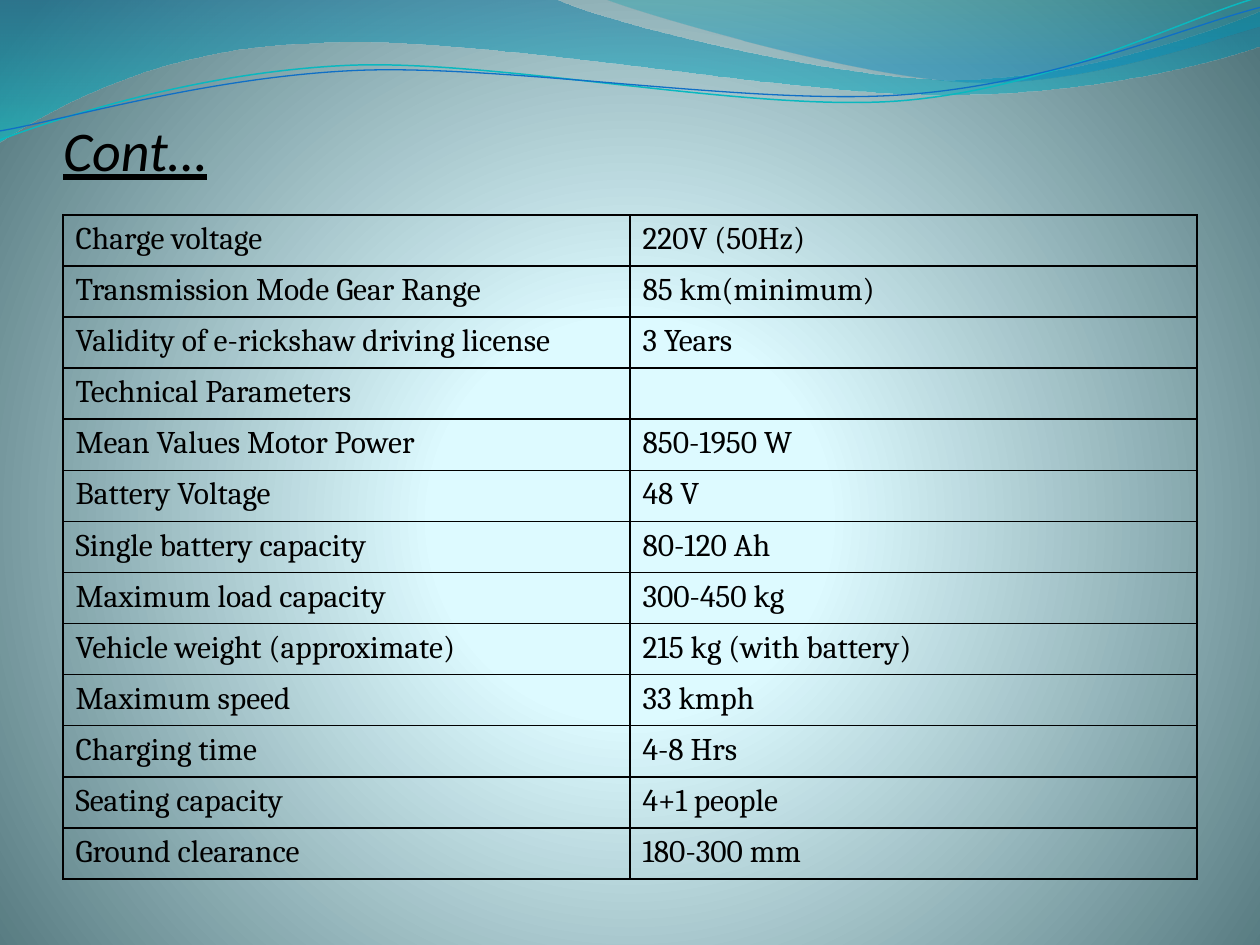
"""Build the e-rickshaw specification slide with its wave header."""
from dataclasses import dataclass
from typing import Optional

from lxml import etree
from pptx import Presentation
from pptx.dml.color import RGBColor
from pptx.enum.text import MSO_ANCHOR, MSO_AUTO_SIZE, PP_ALIGN
from pptx.oxml.ns import qn
from pptx.util import Cm, Pt

LEFT = PP_ALIGN.LEFT
BOTTOM = MSO_ANCHOR.BOTTOM
NO_AUTOFIT = MSO_AUTO_SIZE.NONE
TITLE_ONLY = 5
COLORS = {
    "text": "000000",
    "glow": "DEFBFF",
    "glow_edge": "DDFAFF",
    "shade": "52767C",
    "deep_blue": "0074A1",
    "turquoise": "00C6CF",
    "teal": "00A1A9",
    "azure": "008BBF",
    "cyan_line": "0AB8BF",
    "blue_line": "0F6FC6",
}

Point = tuple[float, float]


@dataclass(frozen=True)
class Stop:
    """A gradient stop, with position and opacity in percent."""
    position: int
    color: str
    opacity: int = 100


@dataclass(frozen=True)
class Wave:
    """An outline in cm: one-point segments are straight, three-point ones Bézier."""
    start: Point
    segments: list[tuple[Point, ...]]
    stops: tuple[Stop, ...] = ()
    line_color: Optional[str] = None
    line_width: float = 0
    rotation: float = 0


BACKGROUND = (Stop(0, "glow"), Stop(25, "glow_edge"), Stop(100, "shade"))
WAVES = [
    Wave((0, 0), [
        ((11.18, -0.03),),
        ((12.09, 0.43), (16.87, 1.6), (19.25, 1.6)),
        ((21.67, 1.6), (24.33, 0.66), (25.4, 0.23)),
        ((25.43, 0.91),),
        ((24.97, 1.12), (22.1, 1.93), (18.95, 1.91)),
        ((15.8, 1.91), (9.7, 0.71), (6.53, 0.86)),
        ((3.28, 0.91), (1.17, 2.11), (-0.03, 2.87)),
        ((0, 0),),
    ], (Stop(0, "deep_blue", 45), Stop(100, "turquoise", 55))),
    Wave((12.17, -0.03), [
        ((12.93, 0.28), (17.32, 1.57), (19.53, 1.65)),
        ((21.74, 1.75), (24.41, 0.81), (25.4, 0.53)),
        ((25.4, 0),),
        ((12.17, -0.03),),
    ], (Stop(0, "teal", 30), Stop(80, "azure", 45))),
    Wave((-0.05, 2.22), [
        ((1.19, 1.82), (4.02, 1.04), (7.05, 1.05)),
        ((10.05, 1.07), (15.02, 2.37), (18.08, 2.29)),
        ((21.13, 2.2), (23.87, 0.91), (25.41, 0.55)),
    ], line_color="cyan_line", line_width=0.85, rotation=357.3),
    Wave((-0.04, 2.04), [
        ((1.16, 1.9), (4.18, 1.15), (7.2, 1.16)),
        ((10.25, 1.18), (15.13, 2.25), (18.18, 2.17)),
        ((21.21, 2.1), (23.93, 1.06), (25.45, 0.75)),
    ], line_color="blue_line", line_width=0.75, rotation=357.3),
]
SPECIFICATIONS = [
    ("Charge voltage", "220V (50Hz)"),
    ("Transmission Mode Gear Range", "85 km(minimum)"),
    ("Validity of e-rickshaw driving license", "3 Years"),
    ("Technical Parameters", ""),
    ("Mean Values Motor Power", "850-1950 W"),
    ("Battery Voltage", "48 V"),
    ("Single battery capacity", "80-120 Ah"),
    ("Maximum load capacity", "300-450 kg"),
    ("Vehicle weight (approximate)", "215 kg (with battery)"),
    ("Maximum speed", "33 kmph"),
    ("Charging time", "4-8 Hrs"),
    ("Seating capacity", "4+1 people"),
    ("Ground clearance", "180-300 mm"),
]


def rgb(name: str) -> RGBColor:
    """Look up a named colour."""
    return RGBColor.from_string(COLORS[name])


def add_color(parent, name: str, opacity: int = 100) -> None:
    """Append a colour element to a fill or gradient stop."""
    color = etree.SubElement(parent, qn("a:srgbClr"), val=COLORS[name])
    if opacity < 100:
        etree.SubElement(color, qn("a:alpha"), val=str(opacity * 1000))


def set_gradient(fill, element, stops: tuple[Stop, ...], radial: bool = False) -> None:
    """Give a fill the stops of a vertical or radial gradient."""
    fill.gradient()
    gradient = next(element.iter(qn("a:gradFill")))
    for child in list(gradient):
        gradient.remove(child)
    stop_list = etree.SubElement(gradient, qn("a:gsLst"))
    for stop in stops:
        node = etree.SubElement(stop_list, qn("a:gs"), pos=str(stop.position * 1000))
        add_color(node, stop.color, stop.opacity)
    if radial:
        circle = etree.SubElement(gradient, qn("a:path"), path="circle")
        etree.SubElement(circle, qn("a:fillToRect"),
                         l="10000", t="110000", r="10000", b="100000")
    else:
        etree.SubElement(gradient, qn("a:lin"), ang="5400000", scaled="1")


def bend_segments(outline, segments: list[tuple[Point, ...]]) -> None:
    """Turn the straight steps of three-point segments into Bézier curves."""
    steps = list(outline.element.iter(qn("a:lnTo")))
    for step, segment in zip(steps, segments):
        if len(segment) == 3:
            curve = etree.Element(qn("a:cubicBezTo"))
            for x, y in segment:
                etree.SubElement(curve, qn("a:pt"), x=str(Cm(x) - outline.left),
                                 y=str(Cm(y) - outline.top))
            step.getparent().replace(step, curve)


def draw_wave(slide, wave: Wave) -> None:
    """Draw a filled wave or an open wavy line."""
    builder = slide.shapes.build_freeform(*map(Cm, wave.start))
    ends = [tuple(map(Cm, segment[-1])) for segment in wave.segments]
    builder.add_line_segments(ends, close=bool(wave.stops))
    outline = builder.convert_to_shape()
    bend_segments(outline, wave.segments)
    outline.rotation = wave.rotation
    outline.shadow.inherit = False
    if wave.stops:
        set_gradient(outline.fill, outline.element, wave.stops)
        outline.line.fill.background()
    else:
        outline.fill.background()
        outline.line.color.rgb = rgb(wave.line_color)
        outline.line.width = Pt(wave.line_width)


def add_run(paragraph, text: str, font_name: str, size: int):
    """Add a run in the text colour and return its font."""
    run = paragraph.add_run()
    run.text = text
    run.font.name = font_name
    run.font.size = Pt(size)
    run.font.color.rgb = rgb("text")
    return run.font


def write_title(slide, text: str) -> None:
    """Place the title in front of the waves and write it."""
    title = slide.shapes.title
    slide.shapes.element.append(title.element)
    title.left, title.top, title.width, title.height = Cm(1.27), Cm(2.51), Cm(22.86), Cm(1.17)
    frame = title.text_frame
    frame.auto_size = NO_AUTOFIT
    frame.vertical_anchor = BOTTOM
    frame.margin_left = frame.margin_right = frame.margin_bottom = 0
    frame.margin_top = Cm(0.13)
    paragraph = frame.paragraphs[0]
    paragraph.alignment = LEFT
    font = add_run(paragraph, text, "Calibri", 32)
    font.italic = font.underline = True


def add_borders(cell) -> None:
    """Put a thin line on all four sides of a cell."""
    properties = cell._tc.get_or_add_tcPr()
    for index, side in enumerate(("a:lnL", "a:lnR", "a:lnT", "a:lnB")):
        border = etree.Element(qn(side), w=str(Pt(1)))
        add_color(etree.SubElement(border, qn("a:solidFill")), "text")
        properties.insert(index, border)


def draw_table(slide, rows: list[tuple[str, str]]) -> None:
    """Draw the two-column specification table."""
    table = slide.shapes.add_table(len(rows), 2, Cm(1.27), Cm(4.33),
                                   Cm(22.86), Cm(1.03) * len(rows)).table
    table.first_row = table.horz_banding = False
    for row_index, row in enumerate(rows):
        for column_index, text in enumerate(row):
            cell = table.cell(row_index, column_index)
            cell.fill.background()
            add_borders(cell)
            if text:
                add_run(cell.text_frame.paragraphs[0], text, "Cambria", 18)


def main() -> None:
    """Build and save the slide."""
    presentation = Presentation()
    presentation.slide_width, presentation.slide_height = Cm(25.4), Cm(19.05)
    slide = presentation.slides.add_slide(presentation.slide_layouts[TITLE_ONLY])
    set_gradient(slide.background.fill, slide.element, BACKGROUND, radial=True)
    for wave in WAVES:
        draw_wave(slide, wave)
    write_title(slide, "Cont…")
    draw_table(slide, SPECIFICATIONS)
    presentation.save("out.pptx")


if __name__ == "__main__":
    main()
